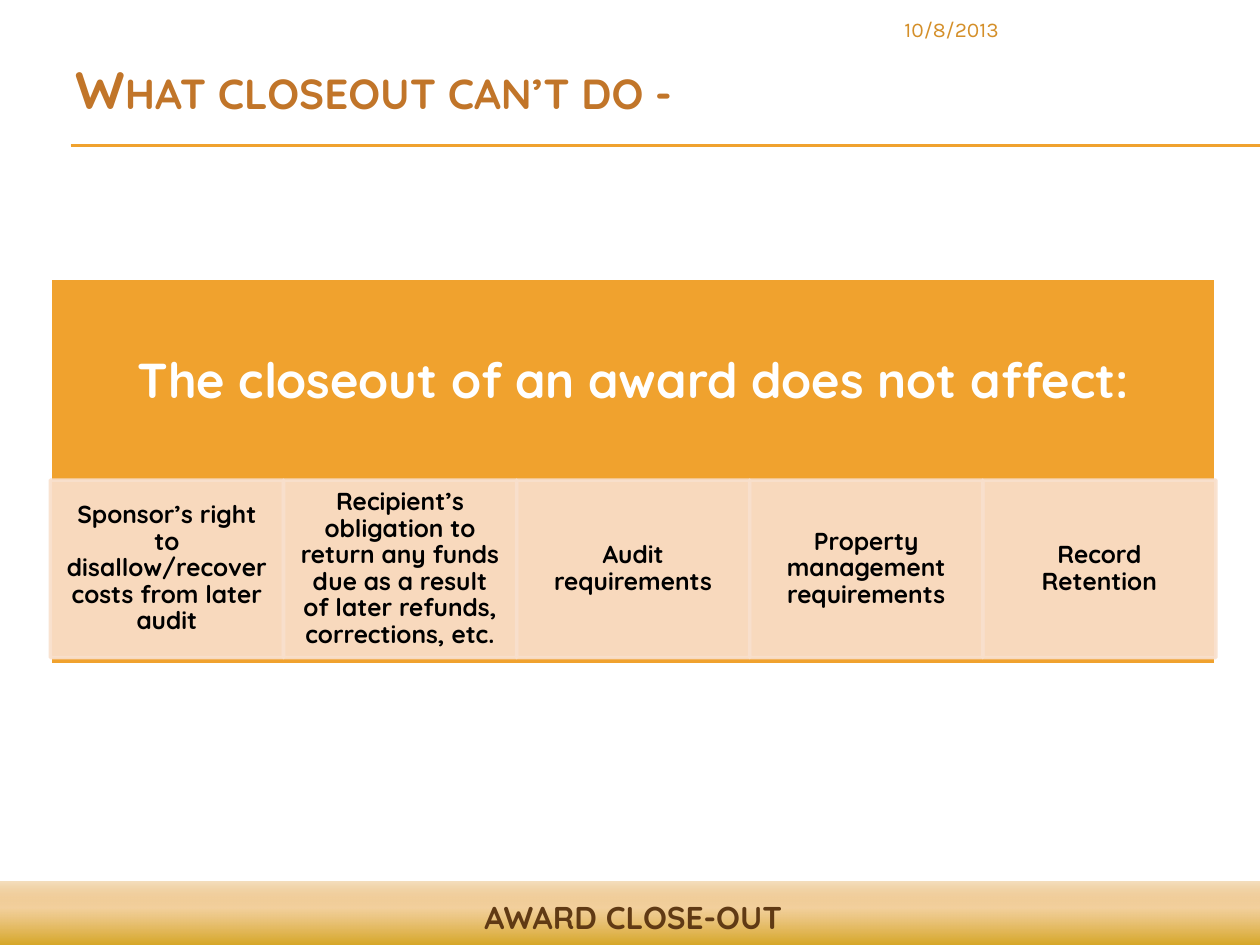
import dataclasses

import lxml.etree
import pptx
import pptx.dml.color
import pptx.enum.shapes
import pptx.enum.text
import pptx.oxml
import pptx.oxml.ns
import pptx.util

Inches = pptx.util.Inches
Pt = pptx.util.Pt
qn = pptx.oxml.ns.qn
RECT = pptx.enum.shapes.MSO_SHAPE.RECTANGLE
ANCHOR = pptx.enum.text.MSO_ANCHOR
ALIGN = pptx.enum.text.PP_ALIGN


@dataclasses.dataclass(frozen=True)
class Theme:
    heading_font: str = "Quicksand"
    date_font: str = "Karla"
    accent: str = "F0A22E"
    title: str = "C17529"
    date: str = "D48F29"
    footer: str = "603A14"
    cell: str = "F9E0CD"
    white: str = "FFFFFF"
    black: str = "000000"
    footer_stops: tuple = ((0, "CC9900", 100), (65, "EFC17E", 75), (100, "D68000", 25))
    title_size: int = 30
    banner_size: int = 28
    footer_size: int = 18
    cell_size: int = 14
    date_size: int = 12


THEME = Theme()


def rgb(value):
    return pptx.dml.color.RGBColor.from_string(value)


def set_alpha(color, percent):
    lxml.etree.SubElement(color, qn("a:alpha")).set("val", str(percent * 1000))


def write(sp, text, size, color, font=THEME.heading_font, bold=True,
          frame=None, para=None):
    tf = sp.text_frame
    for name, value in {"word_wrap": True, **(frame or {})}.items():
        setattr(tf, name, value)
    p = tf.paragraphs[0]
    for name, value in (para or {}).items():
        setattr(p, name, value)
    r = p.add_run()
    r.text = text
    for name, value in {"name": font, "size": Pt(size), "bold": bold}.items():
        setattr(r.font, name, value)
    r.font.color.rgb = rgb(color)
    return r


def margins(side, end):
    return {"margin_left": Inches(side), "margin_right": Inches(side),
            "margin_top": Inches(end), "margin_bottom": Inches(end)}


def add_rect(s, box, fill=None, line=None, alpha=100):
    sp = s.shapes.add_shape(RECT, *map(Inches, box))
    sp.shadow.inherit = False
    if fill:
        sp.fill.solid()
        sp.fill.fore_color.rgb = rgb(fill)
    if line:
        sp.line.color.rgb = rgb(line)
        sp.line.width = Pt(2)
    else:
        sp.line.fill.background()
    if alpha < 100:
        for color in sp._element.spPr.iter(qn("a:srgbClr")):
            set_alpha(color, alpha)
    return sp


def add_text(s, box, text, size, color, **formats):
    sp = s.shapes.add_textbox(*map(Inches, box))
    return write(sp, text, size, color, **formats)


def add_header(s, box, title, date):
    x, y, w, h = box
    add_text(s, (x + 6.58, y - 0.22, 2.75, 0.32), date, THEME.date_size,
             THEME.date, font=THEME.date_font, bold=False)
    r = add_text(s, box, title, THEME.title_size, THEME.title,
                 frame={"vertical_anchor": ANCHOR.BOTTOM})
    r._r.get_or_add_rPr().set("cap", "small")
    for rule_y in (y + h + 0.15, y + h + 0.16):
        rule = s.shapes.add_connector(
            pptx.enum.shapes.MSO_CONNECTOR.STRAIGHT,
            Inches(x + 0.06), Inches(rule_y), Inches(10), Inches(rule_y))
        rule.line.color.rgb = rgb(THEME.accent)
        rule.line.width = Pt(0.75)
        lxml.etree.SubElement(rule._element.spPr, qn("a:effectLst"))


def add_panel(s, box, heading, items):
    x, y, w, h = box
    para = {"alignment": ALIGN.CENTER, "line_spacing": 0.9}
    add_rect(s, box, THEME.accent, THEME.white)
    add_text(s, (x, y, w, 1.66), heading, THEME.banner_size, THEME.white,
             frame={"vertical_anchor": ANCHOR.MIDDLE, **margins(0.22, 0.22)},
             para=para)
    cell_w = w / len(items)
    for i, item in enumerate(items):
        cell = add_rect(s, (x + i * cell_w, y + 1.6, cell_w, 1.41),
                        THEME.cell, THEME.cell, alpha=90)
        write(cell, item, THEME.cell_size, THEME.black,
              frame={"vertical_anchor": ANCHOR.MIDDLE, **margins(0.11, 0.02)},
              para=para)


def add_footer(s, box, text):
    x, y, w, h = box
    band = add_rect(s, box)
    band.fill.gradient()
    band.fill.gradient_angle = 90
    stops = band._element.spPr.find(".//" + qn("a:gsLst"))
    for stop in list(stops):
        stops.remove(stop)
    for position, value, alpha in THEME.footer_stops:
        stop = lxml.etree.SubElement(stops, qn("a:gs"))
        stop.set("pos", str(position * 1000))
        color = lxml.etree.SubElement(stop, qn("a:srgbClr"))
        color.set("val", value)
        set_alpha(color, alpha)
    add_text(s, (x + 0.16, y + 0.08, 9.75, 0.4), text, THEME.footer_size,
             THEME.footer, para={"alignment": ALIGN.CENTER})


def main():
    prs = pptx.Presentation()
    prs.slide_width, prs.slide_height = Inches(10), Inches(7.5)
    s = prs.slides.add_slide(prs.slide_layouts[6])
    add_footer(s, (-0.01, 7, 10.03, 0.58), "AWARD CLOSE-OUT")
    add_header(s, (0.5, 0.3, 8.83, 0.7), "What closeout can’t do -", "10/8/2013")
    add_panel(s, (0.4, 2.21, 9.25, 3.07),
              "The closeout of an award does not affect:",
              ("Sponsor’s right to disallow/recover costs from later audit",
               "Recipient’s obligation to return any funds due as a result "
               "of later refunds, corrections, etc.",
               "Audit requirements",
               "Property management requirements",
               "Record Retention"))
    prs.save("out.pptx")


if __name__ == "__main__":
    main()
